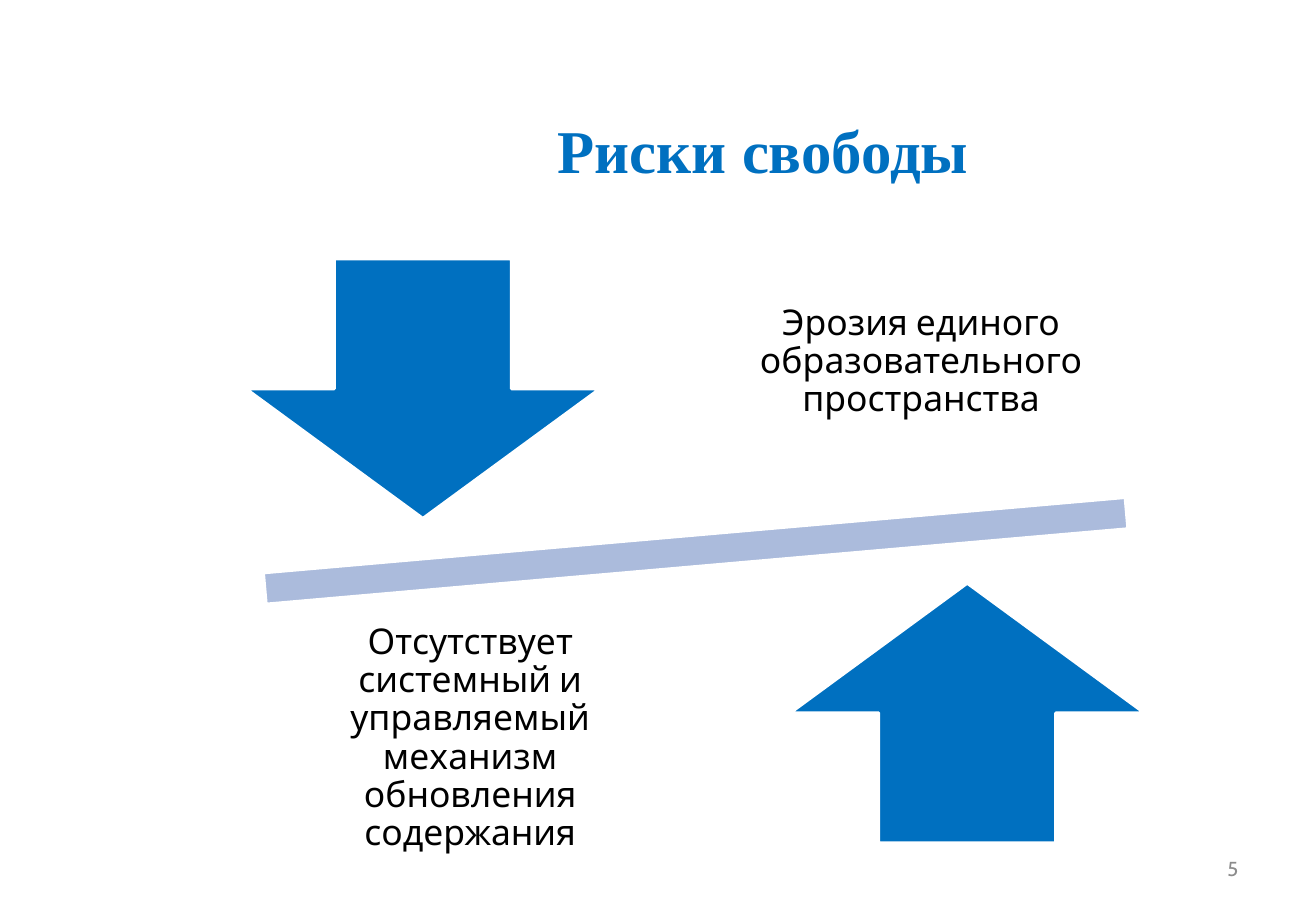
from pptx import Presentation
from pptx.dml.color import RGBColor
from pptx.enum.shapes import MSO_SHAPE
from pptx.enum.text import MSO_ANCHOR, PP_ALIGN
from pptx.util import Inches, Pt

BLUE = RGBColor(0x00, 0x70, 0xC0)
PALE_BLUE = RGBColor(0xAB, 0xBB, 0xDC)
WHITE = RGBColor(0xFF, 0xFF, 0xFF)
BLACK = RGBColor(0x00, 0x00, 0x00)
GRAY = RGBColor(0x8C, 0x8C, 0x8C)

ARROW_SIZE = (2.92, 2.14)
LABEL_SIZE = (3.12, 2.24)


def write_text(shape, text, *, size, color, font="Cabin", bold=False,
               align=PP_ALIGN.CENTER, line_spacing=None, inset=None):
    frame = shape.text_frame
    frame.word_wrap = True
    frame.vertical_anchor = MSO_ANCHOR.MIDDLE
    if inset is not None:
        frame.margin_left = frame.margin_right = Inches(inset)
        frame.margin_top = frame.margin_bottom = Inches(inset)
    paragraph = frame.paragraphs[0]
    paragraph.alignment = align
    paragraph.line_spacing = line_spacing
    run = paragraph.add_run()
    run.text = text
    run.font.name = font
    run.font.size = Pt(size)
    run.font.bold = bold
    run.font.color.rgb = color


class SlideBuilder:
    def __init__(self, presentation):
        self.slide = presentation.slides.add_slide(presentation.slide_layouts[5])

    def title(self, text, left, top, width, height):
        title = self.slide.shapes.title
        title.left, title.top = Inches(left), Inches(top)
        title.width, title.height = Inches(width), Inches(height)
        write_text(title, text, size=36, color=BLUE,
                   font="Times New Roman", bold=True)

    def shape(self, kind, left, top, width, height, fill, rotation=0):
        shape = self.slide.shapes.add_shape(
            kind, Inches(left), Inches(top), Inches(width), Inches(height))
        shape.shadow.inherit = False
        shape.fill.solid()
        shape.fill.fore_color.rgb = fill
        shape.line.color.rgb = WHITE
        shape.line.width = Pt(2)
        shape.rotation = rotation

    def text(self, text, left, top, width, height, **text_format):
        box = self.slide.shapes.add_textbox(
            Inches(left), Inches(top), Inches(width), Inches(height))
        write_text(box, text, **text_format)

    def label(self, text, left, top):
        self.text(text, left, top, *LABEL_SIZE, size=21, color=BLACK,
                  line_spacing=0.9, inset=0.16)


def main():
    presentation = Presentation()
    presentation.slide_width = Inches(10.83)
    presentation.slide_height = Inches(7.5)

    builder = SlideBuilder(presentation)
    builder.title("Риски свободы", 2.27, 0.6, 8.02, 1.25)
    builder.shape(MSO_SHAPE.MATH_MINUS, 0.88, 3.98, 9.69, 1.11, PALE_BLUE, rotation=355)
    builder.shape(MSO_SHAPE.DOWN_ARROW, 2.02, 2.13, *ARROW_SIZE, BLUE)
    builder.label("Эрозия единого образовательного пространства", 6.02, 1.86)
    builder.shape(MSO_SHAPE.UP_ARROW, 6.5, 4.8, *ARROW_SIZE, BLUE)
    builder.label("Отсутствует системный и управляемый механизм обновления содержания",
                  2.31, 4.96)
    builder.text("5", 7.76, 6.95, 2.53, 0.4, size=12, color=GRAY, align=PP_ALIGN.RIGHT)

    presentation.save("out.pptx")


if __name__ == "__main__":
    main()
